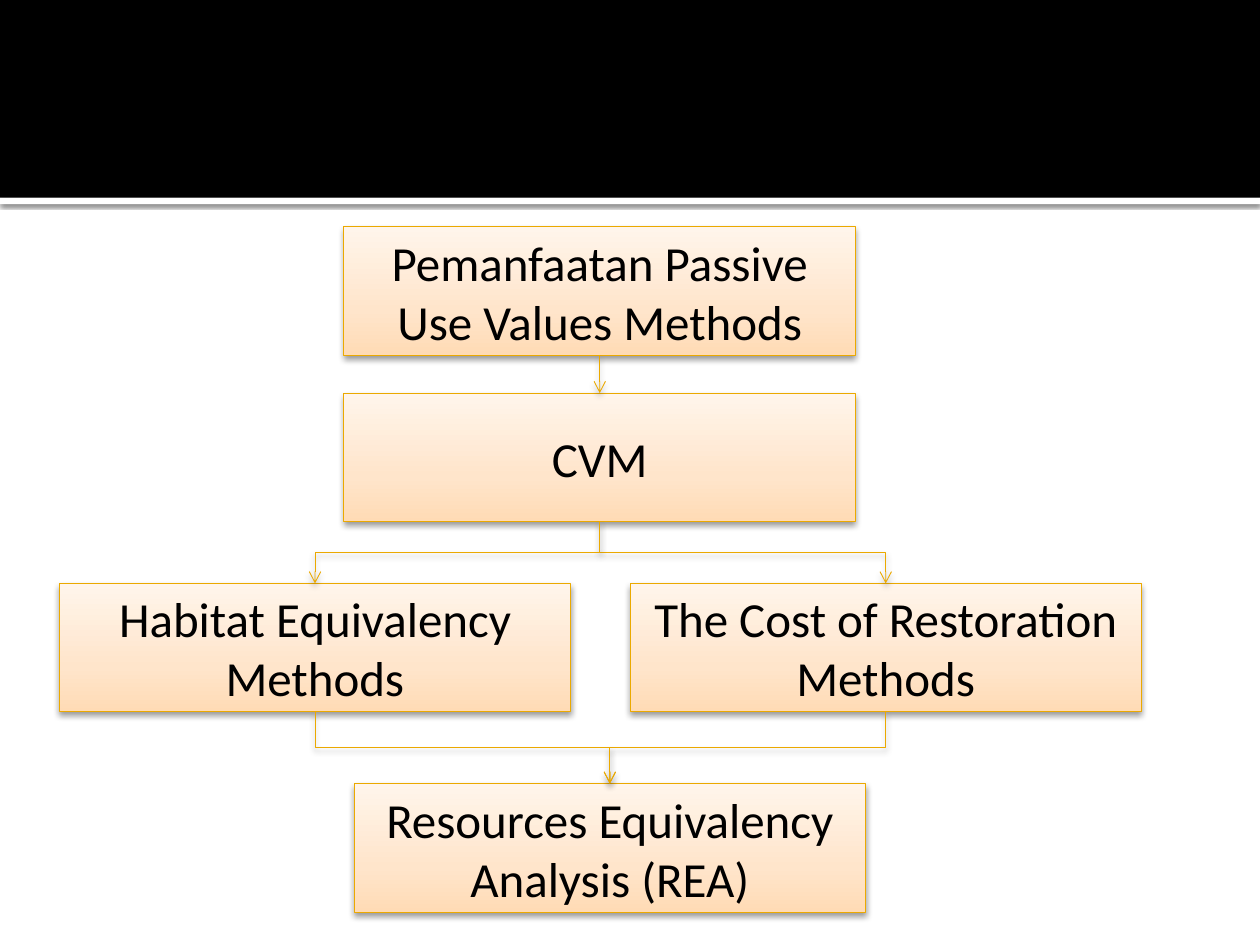
from copy import deepcopy
from dataclasses import dataclass

from lxml.etree import SubElement
from pptx import Presentation
from pptx.dml.color import RGBColor
from pptx.enum.shapes import MSO_CONNECTOR, MSO_SHAPE
from pptx.enum.text import MSO_ANCHOR, PP_ALIGN
from pptx.oxml.ns import qn
from pptx.util import Inches, Pt


@dataclass(frozen=True)
class Theme:
    font: str = "Calibri"
    text_size: float = 28
    line_width: float = 0.5
    black: str = "000000"
    white: str = "FFFFFF"
    outline: str = "EBA900"
    gradient: tuple = ((0, "FFDBB5"), (0.35, "FFE5CB"), (1, "FFF5EB"))


THEME = Theme()
BOX_WIDTH, BOX_HEIGHT = 4.06, 1.02
TOP, BOTTOM = 0, 2  # connection sites of a rectangle


def color(value):
    return RGBColor.from_string(value)


def add_shadow(effects, opacity=38, blur=3.5, distance=2):
    """Add a shadow falling straight down; blur and distance in points."""
    shadow = SubElement(effects, qn("a:outerShdw"), blurRad=str(Pt(blur)),
                        dist=str(Pt(distance)), dir="5400000", rotWithShape="0")
    tint = SubElement(shadow, qn("a:srgbClr"), val=THEME.black)
    SubElement(tint, qn("a:alpha"), val=str(opacity * 1000))


def add_rectangle(page, left, top, width, height):
    shape = page.shapes.add_shape(MSO_SHAPE.RECTANGLE, Inches(left), Inches(top),
                                  Inches(width), Inches(height))
    shape.shadow.inherit = False
    return shape


def add_band(page, top, height, fill):
    band = add_rectangle(page, 0, top, 10, height)
    band.fill.solid()
    band.fill.fore_color.rgb = color(fill)
    band.line.fill.background()
    return band


def fill_gradient(fill):
    """Fill with the theme gradient, its first colour at the bottom."""
    fill.gradient()
    fill.gradient_angle = 90
    first = fill.gradient_stops[0]._gs
    first.addnext(deepcopy(first))
    for stop, (position, value) in zip(fill.gradient_stops, THEME.gradient):
        stop.position = position
        stop.color.rgb = color(value)


def style_line(line):
    line.color.rgb = color(THEME.outline)
    line.width = Pt(THEME.line_width)


def add_box(page, left, top, text):
    box = add_rectangle(page, left, top, BOX_WIDTH, BOX_HEIGHT)
    fill_gradient(box.fill)
    style_line(box.line)
    add_shadow(box._element.spPr.find(qn("a:effectLst")))
    frame = box.text_frame
    frame.word_wrap = True
    frame.vertical_anchor = MSO_ANCHOR.MIDDLE
    frame.text = text
    para = frame.paragraphs[0]
    para.alignment = PP_ALIGN.CENTER
    font = para.runs[0].font
    font.name = THEME.font
    font.size = Pt(THEME.text_size)
    font.color.rgb = color(THEME.black)
    return box


def add_arrow(page, source, target, kind):
    """Join the bottom of one box to the top of another."""
    arrow = page.shapes.add_connector(kind, 0, 0, 0, 0)
    arrow.begin_connect(source, BOTTOM)
    arrow.end_connect(target, TOP)
    style_line(arrow.line)
    properties = arrow._element.spPr
    SubElement(properties.find(qn("a:ln")), qn("a:tailEnd"), type="arrow")
    add_shadow(SubElement(properties, qn("a:effectLst")))
    return arrow


def add_elbow(page, source, target):
    """Add an elbow arrow turned so that it leaves and arrives vertically."""
    elbow = add_arrow(page, source, target, MSO_CONNECTOR.ELBOW)
    goes_right = elbow.end_x > elbow.begin_x
    across, down = elbow.width, elbow.height
    elbow.left += (across - down) // 2
    elbow.top += (down - across) // 2
    elbow.width, elbow.height = down, across
    frame = elbow._element.spPr.find(qn("a:xfrm"))
    frame.set("rot", "16200000" if goes_right else "5400000")
    frame.set("flipH", "1" if goes_right else "0")


def main():
    deck = Presentation()
    deck.slide_width, deck.slide_height = Inches(10), Inches(7.5)
    page = deck.slides.add_slide(deck.slide_layouts[6])

    rule = add_band(page, 1.57, 0.05, THEME.white)
    add_shadow(rule._element.spPr.find(qn("a:effectLst")),
               opacity=60, blur=2.5, distance=0.8)
    add_band(page, 0, 1.57, THEME.black)

    passive_use = add_box(page, 2.73, 1.8, "Pemanfaatan Passive Use Values Methods")
    cvm = add_box(page, 2.73, 3.12, "CVM")
    habitat = add_box(page, 0.47, 4.63, "Habitat Equivalency Methods")
    restoration = add_box(page, 5, 4.63, "The Cost of Restoration Methods")
    resources = add_box(page, 2.81, 6.22, "Resources Equivalency Analysis (REA)")

    add_arrow(page, passive_use, cvm, MSO_CONNECTOR.STRAIGHT)
    for method in (restoration, habitat):
        add_elbow(page, cvm, method)
    for method in (restoration, habitat):
        add_elbow(page, method, resources)

    deck.save("out.pptx")


if __name__ == "__main__":
    main()
